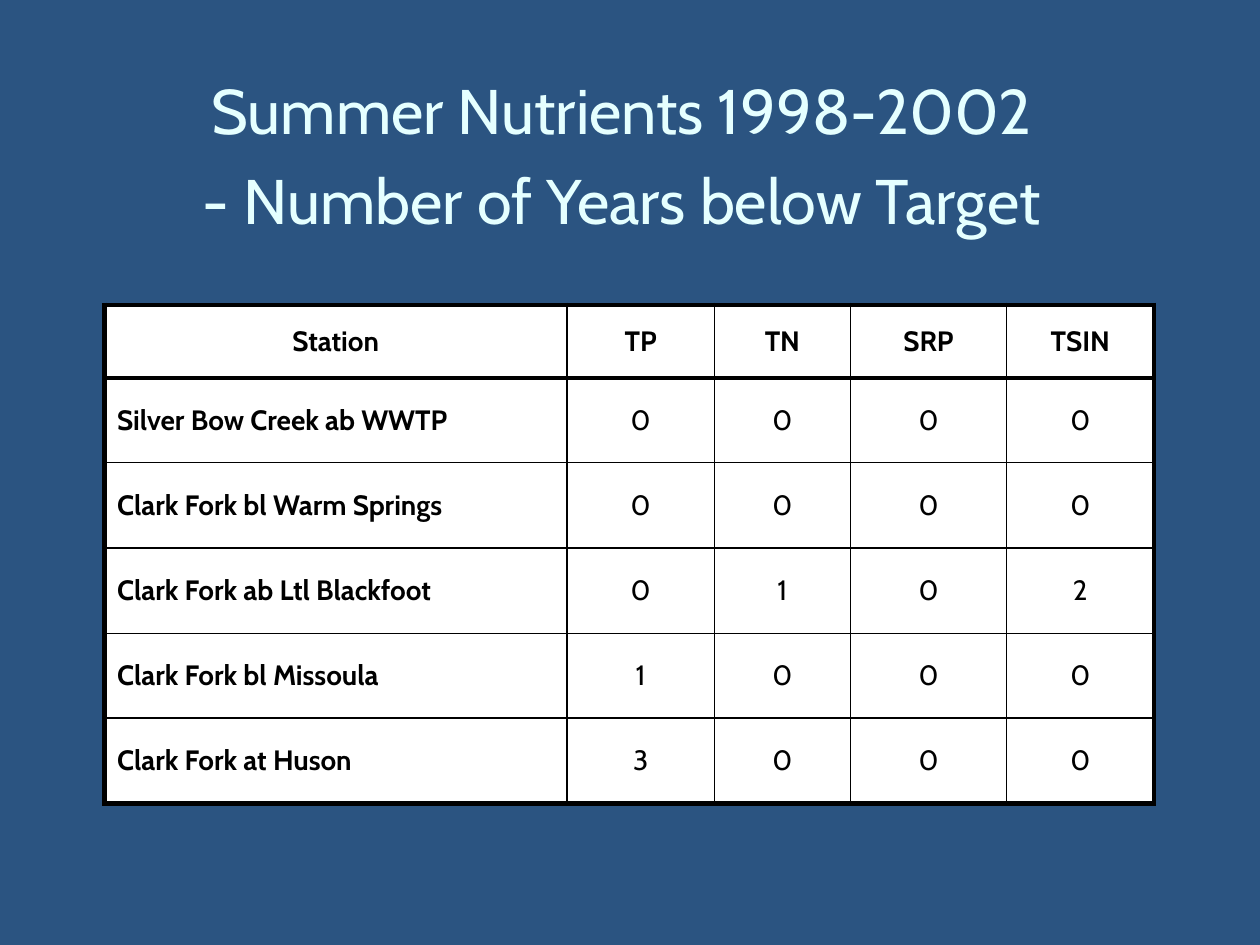
import pptx
import pptx.dml.color
import pptx.enum.text
import pptx.oxml.ns
import pptx.util
from lxml import etree
from pptx.util import Inches

COLORS = {"background": "2B5481", "title": "E5FFFF", "cell": "FFFFFF", "ink": "000000"}
FONT = "Cabin"
THIN, THICK = 1, 3
HANGING = Inches(0.38)
COLUMN_WIDTHS = [3.67, 1.17, 1.08, 1.24, 1.17]
ROW_HEIGHTS = [0.58, 0.67, 0.68, 0.68, 0.67, 0.68]
YEARS_BELOW_TARGET = [
    ["Station", "TP", "TN", "SRP", "TSIN"],
    ["Silver Bow Creek ab WWTP", 0, 0, 0, 0],
    ["Clark Fork bl Warm Springs", 0, 0, 0, 0],
    ["Clark Fork ab Ltl Blackfoot", 0, 1, 0, 2],
    ["Clark Fork bl Missoula", 1, 0, 0, 0],
    ["Clark Fork at Huson", 3, 0, 0, 0],
]
ALIGN = pptx.enum.text.PP_ALIGN
MIDDLE = pptx.enum.text.MSO_ANCHOR.MIDDLE


def rgb(name):
    return pptx.dml.color.RGBColor.from_string(COLORS[name])


def format_font(font, size, color, bold=False):
    font.name = FONT
    font.size = pptx.util.Pt(size)
    font.bold = bold
    font.color.rgb = rgb(color)


def add_title(slide, left, top, width, height):
    title = slide.shapes.title
    title.left, title.top, title.width, title.height = left, top, width, height
    frame = title.text_frame
    frame.text = "Summer Nutrients 1998-2002\v- Number of Years below Target"
    frame.word_wrap = True
    frame.auto_size = pptx.enum.text.MSO_AUTO_SIZE.NONE
    frame.vertical_anchor = MIDDLE
    frame.margin_right = Inches(0.23)
    para = frame.paragraphs[0]
    para.alignment = ALIGN.CENTER
    para.line_spacing = pptx.util.Pt(51)
    for span in para.runs:
        format_font(span.font, 36, "title")


def set_borders(cell, widths):
    """Draw the cell's sides; widths maps L, R, T, B, in that order, to points."""
    properties = cell._tc.get_or_add_tcPr()
    for position, (side, width) in enumerate(widths.items()):
        line = etree.Element(pptx.oxml.ns.qn(f"a:ln{side}"), w=str(pptx.util.Pt(width)))
        fill = etree.SubElement(line, pptx.oxml.ns.qn("a:solidFill"))
        etree.SubElement(fill, pptx.oxml.ns.qn("a:srgbClr"), val=COLORS["ink"])
        properties.insert(position, line)


def fill_cell(cell, text, bold, alignment):
    cell.fill.solid()
    cell.fill.fore_color.rgb = rgb("cell")
    cell.vertical_anchor = MIDDLE
    cell.text_frame.text = text
    para = cell.text_frame.paragraphs[0]
    para.alignment = alignment
    properties = para._p.get_or_add_pPr()
    properties.set("marL", str(HANGING))
    properties.set("indent", str(-HANGING))
    format_font(para.runs[0].font, 16, "ink", bold)


def add_station_table(slide, left, top, width, height):
    last_row, last_column = len(ROW_HEIGHTS) - 1, len(COLUMN_WIDTHS) - 1
    table = slide.shapes.add_table(
        last_row + 1, last_column + 1, left, top, width, height).table
    table.horz_banding = False
    for column, column_width in zip(table.columns, COLUMN_WIDTHS):
        column.width = Inches(column_width)
    for row, row_height in zip(table.rows, ROW_HEIGHTS):
        row.height = Inches(row_height)
    for r, values in enumerate(YEARS_BELOW_TARGET):
        for c, value in enumerate(values):
            cell = table.cell(r, c)
            is_station = r > 0 and c == 0
            fill_cell(cell, str(value), r == 0 or c == 0,
                      ALIGN.LEFT if is_station else ALIGN.CENTER)
            set_borders(cell, {
                "L": THICK if c == 0 else THIN,
                "R": THICK if c == last_column else THIN,
                "T": THICK if r <= 1 else THIN,
                "B": THICK if r in (0, last_row) else THIN,
            })


def main():
    deck = pptx.Presentation()
    deck.slide_width, deck.slide_height = Inches(10), Inches(7.5)
    slide = deck.slides.add_slide(deck.slide_layouts.get_by_name("Title Only"))
    slide.background.fill.solid()
    slide.background.fill.fore_color.rgb = rgb("background")
    add_title(slide, Inches(0.5), Inches(0.42), Inches(9), Inches(1.5))
    add_station_table(slide, Inches(0.83), Inches(2.42), Inches(8.33), Inches(3.96))
    deck.save("out.pptx")


if __name__ == "__main__":
    main()
